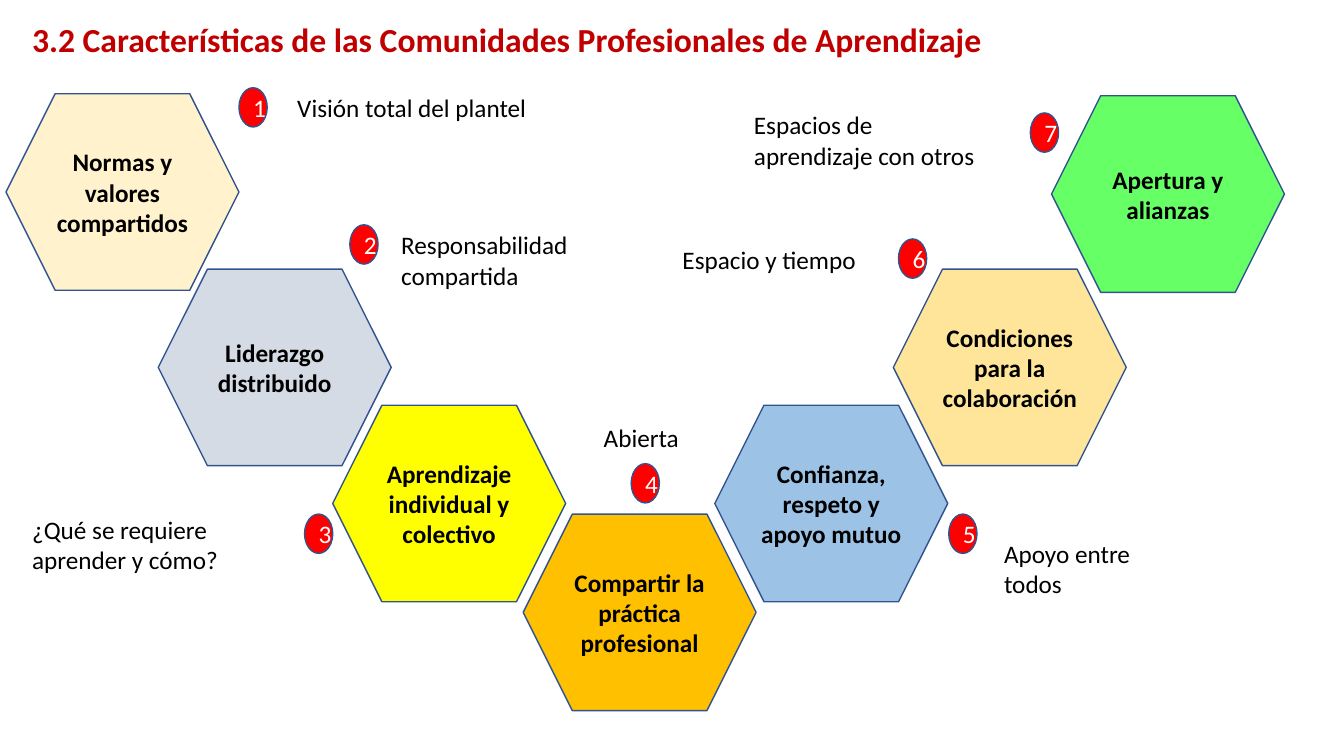
from dataclasses import dataclass

from pptx import Presentation
from pptx.dml.color import RGBColor
from pptx.enum.shapes import MSO_SHAPE
from pptx.enum.text import MSO_ANCHOR, PP_ALIGN
from pptx.util import Inches, Pt

WIDTH, HEIGHT = Inches(13.33), Inches(7.5)
FONT = "Calibri"
BLACK = RGBColor(0x00, 0x00, 0x00)
WHITE = RGBColor(0xFF, 0xFF, 0xFF)
RED = RGBColor(0xFF, 0x00, 0x00)
DARK_RED = RGBColor(0xC0, 0x00, 0x00)
OUTLINE = RGBColor(0x31, 0x53, 0x8F)
CREAM = RGBColor(0xFF, 0xF2, 0xCC)
GREY = RGBColor(0xD5, 0xDB, 0xE5)
YELLOW = RGBColor(0xFF, 0xFF, 0x00)
AMBER = RGBColor(0xFF, 0xC0, 0x00)
BLUE = RGBColor(0x9C, 0xC2, 0xE5)
SAND = RGBColor(0xFE, 0xE5, 0x99)
GREEN = RGBColor(0x66, 0xFF, 0x66)

TITLE = "3.2 Características de las Comunidades Profesionales de Aprendizaje"
TITLE_BOX = (1.65, 1.87, 75.62, 6.67)
HEXAGON_SIZE = (17.33, 26)
BADGE_SIZE = (2.1, 5.2)
ONE_LINE, TWO_LINES = 5.33, 9.47


@dataclass
class Trait:
    """A hexagon in percent of the slide; badge and note are offset from it."""
    name: str
    fill: RGBColor
    corner: tuple
    badge: tuple
    note: str
    note_offset: tuple
    note_size: tuple


TRAITS = [
    Trait("Normas y valores compartidos", CREAM, (0.45, 12.4), (17.33, -0.8),
          "Visión total del plantel", (20.93, -0.8), (19.28, ONE_LINE)),
    Trait("Liderazgo distribuido", GREY, (11.78, 35.6), (14.25, -5.87),
          "Responsabilidad compartida", (17.33, -5.87), (16.5, TWO_LINES)),
    Trait("Aprendizaje individual y colectivo", YELLOW, (24.76, 53.6), (-2.1, 14.4),
          "¿Qué se requiere aprender y cómo?", (-23.11, 13.73), (19.65, TWO_LINES)),
    Trait("Compartir la práctica profesional", AMBER, (38.93, 68), (8.03, -6.67),
          "Abierta", (5.25, -12.8), (9.98, ONE_LINE)),
    Trait("Confianza, respeto y apoyo mutuo", BLUE, (53.19, 53.6), (17.4, 14.4),
          "Apoyo entre todos", (20.78, 16.93), (14.85, TWO_LINES)),
    Trait("Condiciones para la colaboración", SAND, (66.47, 35.6), (0.38, -4),
          "Espacio y tiempo", (-16.43, -4), (15.45, ONE_LINE)),
    Trait("Apertura y alianzas", GREEN, (78.24, 12.67), (-1.58, 2.27),
          "Espacios de aprendizaje con otros", (-22.88, 1.2), (19.28, TWO_LINES)),
]


def to_slide(box):
    """Turn a box in percent into slide lengths."""
    left, top, width, height = box
    return (int(WIDTH * left / 100), int(HEIGHT * top / 100),
            int(WIDTH * width / 100), int(HEIGHT * height / 100))


def shifted(corner, offset):
    """Return the point that lies at an offset from a corner."""
    return corner[0] + offset[0], corner[1] + offset[1]


def write(shape, text, color, size=18, bold=False):
    """Put one formatted paragraph into a shape and return the paragraph."""
    frame = shape.text_frame
    frame.word_wrap = True
    frame.text = text
    para = frame.paragraphs[0]
    font = para.runs[0].font
    font.name, font.size, font.bold = FONT, Pt(size), bold
    font.color.rgb = color
    return para


def add_label(page, box, text, color=BLACK, size=18, bold=False):
    """Add a left-aligned text box."""
    write(page.shapes.add_textbox(*to_slide(box)), text, color, size, bold)


def add_figure(page, kind, box, fill, text, color, bold=False):
    """Add a filled, outlined shape with centred text."""
    figure = page.shapes.add_shape(kind, *to_slide(box))
    figure.shadow.inherit = False
    figure.fill.solid()
    figure.fill.fore_color.rgb = fill
    figure.line.color.rgb = OUTLINE
    figure.line.width = Pt(1)
    figure.text_frame.vertical_anchor = MSO_ANCHOR.MIDDLE
    write(figure, text, color, bold=bold).alignment = PP_ALIGN.CENTER


def add_trait(page, number, trait):
    """Place a hexagon with its numbered badge and its note."""
    add_figure(page, MSO_SHAPE.HEXAGON, trait.corner + HEXAGON_SIZE,
               trait.fill, trait.name, BLACK, bold=True)
    add_figure(page, MSO_SHAPE.OVAL, shifted(trait.corner, trait.badge) + BADGE_SIZE,
               RED, str(number), WHITE)
    add_label(page, shifted(trait.corner, trait.note_offset) + trait.note_size, trait.note)


def main():
    """Build the slide and save it."""
    deck = Presentation()
    deck.slide_width, deck.slide_height = WIDTH, HEIGHT
    page = deck.slides.add_slide(deck.slide_layouts[6])
    add_label(page, TITLE_BOX, TITLE, DARK_RED, 24, True)
    for number, trait in enumerate(TRAITS, 1):
        add_trait(page, number, trait)
    deck.save("out.pptx")


if __name__ == "__main__":
    main()
